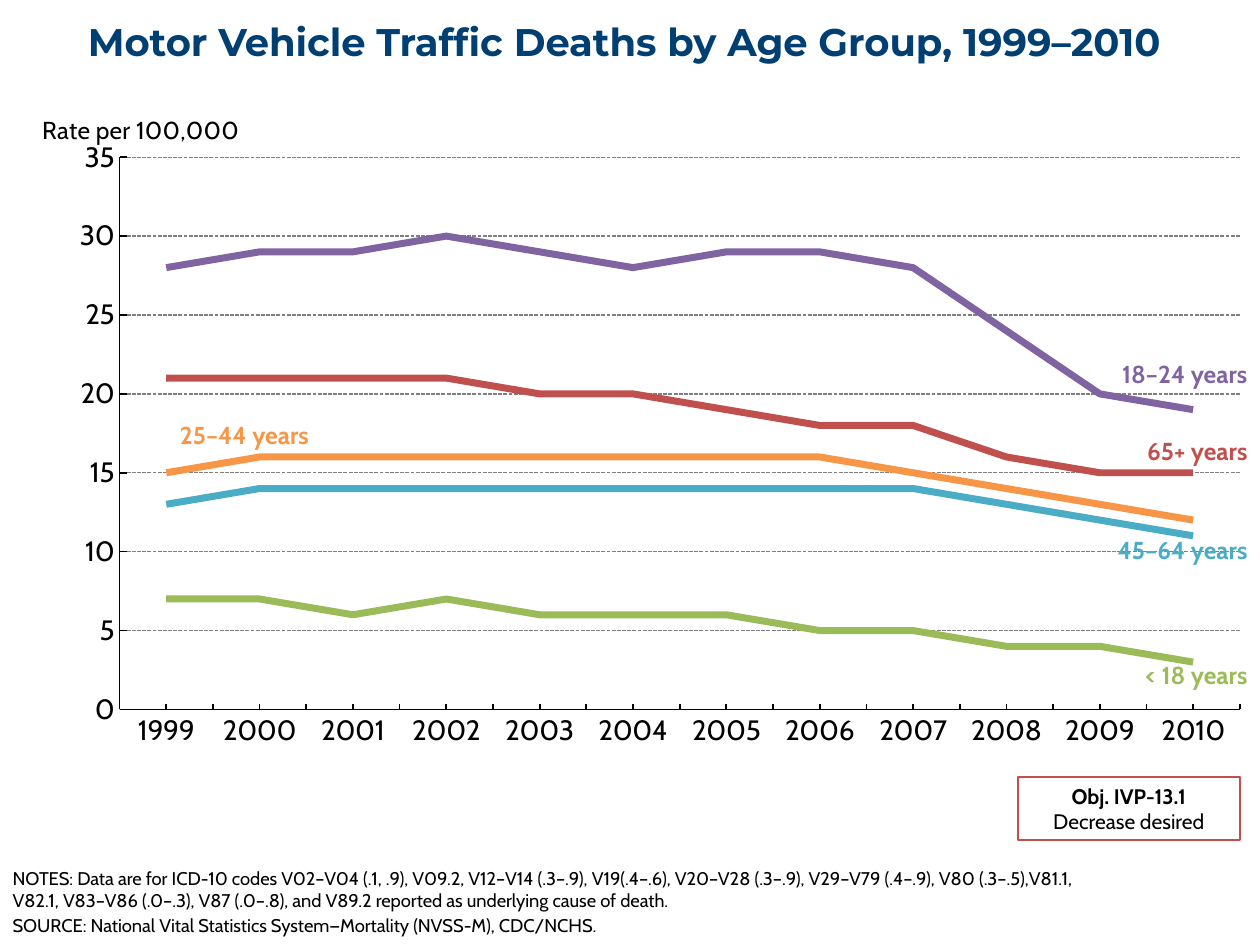
from dataclasses import dataclass

from lxml import etree
from pptx import Presentation
from pptx.chart.data import CategoryChartData
from pptx.dml.color import RGBColor
from pptx.enum.chart import XL_CHART_TYPE, XL_MARKER_STYLE, XL_TICK_MARK
from pptx.enum.dml import MSO_LINE
from pptx.enum.shapes import MSO_SHAPE
from pptx.enum.text import MSO_ANCHOR, MSO_AUTO_SIZE, PP_ALIGN
from pptx.oxml import parse_xml
from pptx.oxml.ns import nsdecls, qn
from pptx.util import Inches, Pt


@dataclass(frozen=True)
class Theme:
    heading: str = "Montserrat"
    text: str = "Cabin"
    title_size: float = 22
    axis_size: float = 16
    label_size: float = 14
    box_size: float = 12
    note_size: float = 10.5
    navy: str = "003F72"
    black: str = "000000"
    grid: str = "7F7F7F"
    green: str = "9BBB59"
    purple: str = "8064A2"
    orange: str = "F79646"
    teal: str = "4BACC6"
    red: str = "C0504D"


T = Theme()

YEARS = [str(year) for year in range(1999, 2011)]
SERIES = [
    ("Series 1", T.green, (7, 7, 6, 7, 6, 6, 6, 5, 5, 4, 4, 3)),
    ("Series 2", T.purple, (28, 29, 29, 30, 29, 28, 29, 29, 28, 24, 20, 19)),
    ("Series 3", T.orange, (15, 16, 16, 16, 16, 16, 16, 16, 15, 14, 13, 12)),
    ("Series 4", T.teal, (13, 14, 14, 14, 14, 14, 14, 14, 14, 13, 12, 11)),
    ("Series 5", T.red, (21, 21, 21, 21, 20, 20, 19, 18, 18, 16, 15, 15)),
]
LABELS = [
    ("65+ years", T.red, PP_ALIGN.RIGHT, (7.81, 3.42, 2.19, 0.31)),
    ("< 18 years", T.green, PP_ALIGN.RIGHT, (7.59, 5.17, 2.41, 0.37)),
    ("45–64 years", T.teal, PP_ALIGN.RIGHT, (7.78, 4.17, 2.22, 0.39)),
    ("25–44 years", T.orange, PP_ALIGN.LEFT, (1.33, 3.25, 2.66, 0.4)),
    ("18–24 years", T.purple, PP_ALIGN.RIGHT, (8.37, 2.75, 1.63, 0.43)),
]
NOTES = [
    "NOTES: Data are for ICD-10 codes V02–V04 (.1, .9), V09.2, V12–V14 (.3–.9), "
    "V19(.4–.6), V20–V28 (.3–.9), V29–V79 (.4–.9), V80 (.3–.5),V81.1, V82.1, "
    "V83–V86 (.0–.3), V87 (.0–.8), and V89.2 reported as underlying cause of death.",
    "SOURCE: National Vital Statistics System—Mortality (NVSS-M), CDC/NCHS.",
]


def inches(box):
    return [Inches(value) for value in box]


def place(sp, box):
    sp.left, sp.top, sp.width, sp.height = inches(box)


def set_font(font, size, color=T.black, bold=False, name=T.text):
    values = {"name": name, "size": Pt(size), "bold": bold}
    for key, value in values.items():
        setattr(font, key, value)
    font.color.rgb = RGBColor.from_string(color)


def set_line(line, color, width):
    line.color.rgb = RGBColor.from_string(color)
    line.width = Pt(width)


def write(sp, lines, anchor, align, gap=0):
    """Fill a shape; each line is a text and its font values."""
    tf = sp.text_frame
    values = {"word_wrap": True, "auto_size": MSO_AUTO_SIZE.NONE,
              "vertical_anchor": anchor}
    for key, value in values.items():
        setattr(tf, key, value)
    for i, (text, font) in enumerate(lines):
        p = tf.add_paragraph() if i else tf.paragraphs[0]
        p.alignment = align
        p.space_before = Pt(gap if i else 0)
        r = p.add_run()
        r.text = text
        set_font(r.font, **font)


def remove_bullets(tf):
    for p in tf.paragraphs:
        pPr = p._p.get_or_add_pPr()
        pPr.set("marL", "0")
        pPr.set("indent", "0")
        etree.SubElement(pPr, qn("a:buNone"))


def manual_layout(x, y, w=None, h=None):
    parts = [("xMode", "edge"), ("yMode", "edge"), ("x", x), ("y", y)]
    if w is not None:
        parts = [("layoutTarget", "inner"), *parts, ("w", w), ("h", h)]
    inner = "".join(f'<c:{tag} val="{value}"/>' for tag, value in parts)
    return parse_xml(f"<c:layout {nsdecls('c')}><c:manualLayout>{inner}"
                     "</c:manualLayout></c:layout>")


def set_layout(parent, layout, index):
    for old in parent.findall(qn("c:layout")):
        parent.remove(old)
    parent.insert(index, layout)


def format_axes(chart):
    cat, val = chart.category_axis, chart.value_axis
    for axis in (cat, val):
        set_font(axis.tick_labels.font, T.axis_size)
        set_line(axis.format.line, T.black, 1)
    formats = {
        cat: {"major_tick_mark": XL_TICK_MARK.NONE,
              "minor_tick_mark": XL_TICK_MARK.INSIDE,
              "has_major_gridlines": False},
        val: {"major_tick_mark": XL_TICK_MARK.INSIDE,
              "minor_tick_mark": XL_TICK_MARK.NONE,
              "minimum_scale": 0, "maximum_scale": 35, "major_unit": 5,
              "has_major_gridlines": True},
    }
    for axis, values in formats.items():
        for key, value in values.items():
            setattr(axis, key, value)
    val.tick_labels.number_format = "0"
    val.tick_labels.number_format_is_linked = False
    grid = val.major_gridlines.format.line
    set_line(grid, T.grid, 0.75)
    grid.dash_style = MSO_LINE.SQUARE_DOT

    # Horizontal axis title above the scale
    title = val.axis_title
    tf = title.text_frame
    tf.text = "Rate per 100,000"
    set_font(tf.paragraphs[0].runs[0].font, T.label_size)
    body = tf._txBody.find(qn("a:bodyPr"))
    body.set("rot", "0")
    body.set("vert", "horz")
    set_layout(title._element, manual_layout(0.03, 0.015), 1)


def add_line_chart(s, box):
    data = CategoryChartData(number_format="0")
    data.categories = YEARS
    for name, _, values in SERIES:
        data.add_series(name, values)
    chart = s.shapes.add_chart(XL_CHART_TYPE.LINE, *inches(box), data).chart
    chart.has_legend = False
    chart.has_title = False
    set_font(chart.font, 18, name="Calibri")
    for series, (_, color, _) in zip(chart.plots[0].series, SERIES):
        set_line(series.format.line, color, 4)
        series.marker.style = XL_MARKER_STYLE.NONE
        series.smooth = False
    format_axes(chart)
    plot_area = chart._chartSpace.find(".//" + qn("c:plotArea"))
    set_layout(plot_area, manual_layout(0.095, 0.088, 0.89, 0.824), 0)


def add_label(s, text, color, align, box):
    sp = s.shapes.add_textbox(*inches(box))
    font = {"size": T.label_size, "color": color, "bold": True}
    write(sp, [(text, font)], MSO_ANCHOR.MIDDLE, align)


def add_objective(s, box):
    sp = s.shapes.add_shape(MSO_SHAPE.RECTANGLE, *inches(box))
    sp.shadow.inherit = False
    sp.fill.background()
    set_line(sp.line, T.red, 1.25)
    lines = [("Obj. IVP-13.1", {"size": T.box_size, "bold": True}),
             ("Decrease desired", {"size": T.box_size})]
    write(sp, lines, MSO_ANCHOR.MIDDLE, PP_ALIGN.CENTER)


def main():
    prs = Presentation()
    prs.slide_width, prs.slide_height = Inches(10), Inches(7.5)
    s = prs.slides.add_slide(prs.slide_layouts[1])
    title, notes = s.placeholders

    # Title
    place(title, (-0.17, 0, 10.25, 0.66))
    font = {"size": T.title_size, "color": T.navy, "bold": True, "name": T.heading}
    write(title, [("Motor Vehicle Traffic Deaths by Age Group, 1999–2010", font)],
          MSO_ANCHOR.MIDDLE, PP_ALIGN.CENTER)

    # Chart and the names of its lines
    add_line_chart(s, (0, 0.78, 9.99, 5.32))
    for label in LABELS:
        add_label(s, *label)

    # Notes and objective
    place(notes, (0, 6.83, 8.83, 0.62))
    write(notes, [(text, {"size": T.note_size}) for text in NOTES],
          MSO_ANCHOR.TOP, PP_ALIGN.LEFT, gap=2)
    remove_bullets(notes.text_frame)
    add_objective(s, (8.08, 6.17, 1.76, 0.5))

    prs.save("out.pptx")


if __name__ == "__main__":
    main()
